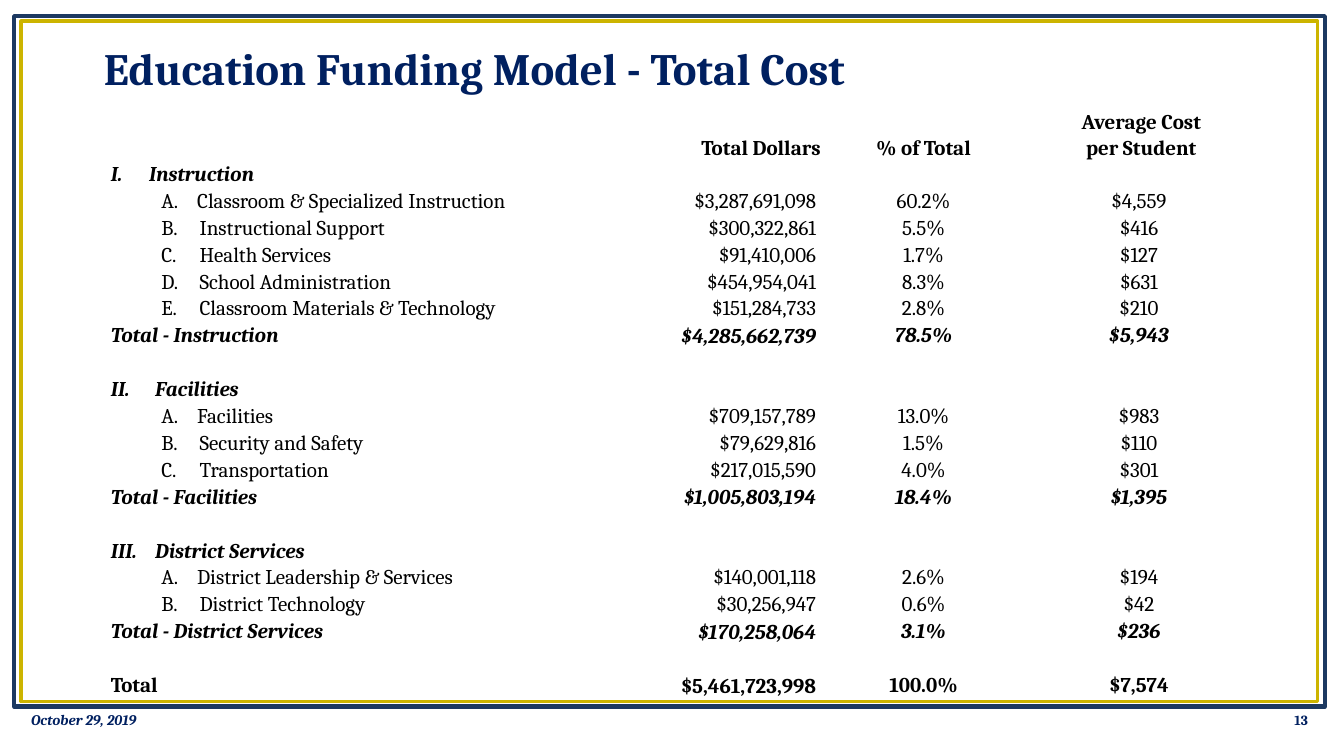
from lxml.etree import SubElement
from pptx import Presentation
from pptx.dml.color import RGBColor
from pptx.enum.shapes import MSO_SHAPE
from pptx.enum.text import MSO_ANCHOR as ANCHOR, PP_ALIGN as ALIGN
from pptx.oxml.ns import qn
from pptx.util import Inches, Pt

COLORS = {"navy": "002060", "frame": "1C3961", "gold": "CCB400", "black": "000000"}
NO_STYLE = "{2D5ABB26-0587-4C30-8999-92F81FD0307C}"
COLUMNS = [4.74, 2.44, 1.9, 2.42]
HEADINGS = ["", "Total Dollars", "% of Total", "Average Cost\nper Student"]
ALIGNS = [ALIGN.LEFT, ALIGN.RIGHT, ALIGN.CENTER, ALIGN.CENTER]
TABLE_HEIGHT, HEADER_HEIGHT = 5.87, 0.53

# Each section: name, items, totals
SECTIONS = [
    ("Instruction", [
        ("Classroom & Specialized Instruction", "$3,287,691,098 ", "60.2%", "$4,559 "),
        ("Instructional Support", "$300,322,861 ", "5.5%", "$416 "),
        ("Health Services", "$91,410,006 ", "1.7%", "$127 "),
        ("School Administration", "$454,954,041 ", "8.3%", "$631 "),
        ("Classroom Materials & Technology", "$151,284,733 ", "2.8%", "$210 "),
    ], ("$4,285,662,739 ", "78.5%", "$5,943 ")),
    ("Facilities", [
        ("Facilities", "$709,157,789 ", "13.0%", "$983 "),
        ("Security and Safety", "$79,629,816 ", "1.5%", "$110 "),
        ("Transportation", "$217,015,590 ", "4.0%", "$301 "),
    ], ("$1,005,803,194 ", "18.4%", "$1,395 ")),
    ("District Services", [
        ("District Leadership & Services", "$140,001,118 ", "2.6%", "$194 "),
        ("District Technology", "$30,256,947 ", "0.6%", "$42 "),
    ], ("$170,258,064 ", "3.1%", "$236 ")),
]
GRAND_TOTAL = ("Total", "$5,461,723,998 ", "100.0%", "$7,574 ")


def add_run(p, text, color, **formats):
    r = p.add_run()
    r.text = text
    r.font.color.rgb = RGBColor.from_string(COLORS[color])
    for name, value in {"name": "Cambria", **formats}.items():
        setattr(r.font, name, value)


def add_frame(s, box, color, width):
    sp = s.shapes.add_shape(MSO_SHAPE.RECTANGLE, *map(Inches, box))
    sp.shadow.inherit = False
    sp.fill.background()
    sp.line.color.rgb = RGBColor.from_string(COLORS[color])
    sp.line.width = Pt(width)


def add_footer(s, left, text, align, **formats):
    tf = s.shapes.add_textbox(Inches(left), Inches(6.94), Inches(3), Inches(0.4)).text_frame
    tf.word_wrap = True
    tf.vertical_anchor = ANCHOR.MIDDLE
    tf.paragraphs[0].alignment = align
    add_run(tf.paragraphs[0], text, "navy", bold=True, **formats)


def number_paragraph(p, kind, start, left, hang):
    pPr = p._p.get_or_add_pPr()
    pPr.set("marL", str(Inches(left)))
    pPr.set("indent", str(-Inches(hang)))
    SubElement(pPr, qn("a:buAutoNum"), type=kind, startAt=str(start))


def fill_cell(cell, text, align, anchor, numbering=None, **formats):
    for side, margin in {"left": 0.07, "right": 0.07, "top": 0, "bottom": 0}.items():
        setattr(cell, f"margin_{side}", Inches(margin))
    cell.vertical_anchor = anchor
    cell.fill.background()
    tf = cell.text_frame
    for i, line in enumerate(text.split("\n")):
        p = tf.add_paragraph() if i else tf.paragraphs[0]
        p.alignment = align
        if numbering:
            number_paragraph(p, *numbering)
        if line:
            p.line_spacing = 1.07
            add_run(p, line, "black", size=Pt(15), **formats)
        else:
            SubElement(p._p, qn("a:endParaRPr"), sz="1000")


def table_rows():
    """Yield the texts, label numbering and font formats of each row."""
    blank = ("",) * 4
    strong = {"bold": True, "italic": True}
    for n, (name, items, totals) in enumerate(SECTIONS, 1):
        indent = 0.38 if n == 1 else 0.44
        yield (name, *blank[1:]), ("romanUcPeriod", n, indent, indent), strong
        for k, (label, *values) in enumerate(items, 1):
            # The first item has a narrower indent and a leading space
            left, hang, lead = (0.81, 0.31, " ") if k == 1 else (0.88, 0.38, "")
            yield (lead + label, *values), ("alphaUcPeriod", k, left, hang), {}
        yield (f"Total - {name}", *totals), None, strong
        yield blank, None, {}
    yield GRAND_TOTAL, None, {"bold": True}


def add_cost_table(s):
    rows = list(table_rows())
    table = s.shapes.add_table(len(rows) + 1, len(COLUMNS), Inches(1.03), Inches(1.06),
                               Inches(sum(COLUMNS)), Inches(TABLE_HEIGHT)).table
    table.first_row = table.horz_banding = False
    table._tbl.tblPr.find(qn("a:tableStyleId")).text = NO_STYLE
    for column, width in zip(table.columns, COLUMNS):
        column.width = Inches(width)
    for row in table.rows:
        row.height = Inches((TABLE_HEIGHT - HEADER_HEIGHT) / len(rows))
    table.rows[0].height = Inches(HEADER_HEIGHT)

    for c, heading in enumerate(HEADINGS):
        fill_cell(table.cell(0, c), heading, ALIGNS[c], ANCHOR.BOTTOM, bold=True)
    for r, (texts, numbering, formats) in enumerate(rows, 1):
        for c, text in enumerate(texts):
            low = c == 1 and formats.get("bold")
            cell = table.cell(r, c)
            fill_cell(cell, text, ALIGNS[c], ANCHOR.BOTTOM if low else ANCHOR.MIDDLE,
                      None if c else numbering, **formats)
            if c == 0 and numbering and numbering[0] == "alphaUcPeriod":
                cell.text_frame.paragraphs[0].level = 1


def set_title(s, text):
    title = s.shapes.title
    box = {"left": 0.93, "top": 0.22, "width": 11.5, "height": 0.97}
    for name, value in box.items():
        setattr(title, name, Inches(value))
    tf = title.text_frame
    tf.vertical_anchor = ANCHOR.MIDDLE
    p = tf.paragraphs[0]
    p.alignment = ALIGN.LEFT
    p.line_spacing = 0.9
    add_run(p, text, "navy", size=Pt(32), bold=True)


def main():
    prs = Presentation()
    prs.slide_width, prs.slide_height = Inches(13.33), Inches(7.5)
    s = prs.slides.add_slide(prs.slide_layouts[5])

    # Double border
    add_frame(s, (0.14, 0.16, 13, 6.85), "frame", 3)
    add_frame(s, (0.21, 0.21, 12.86, 6.75), "gold", 2.5)

    # Title and table
    set_title(s, "Education Funding Model - Total Cost")
    add_cost_table(s)

    # Footer
    add_footer(s, 10.07, "13", ALIGN.RIGHT, size=Pt(10))
    add_footer(s, 0.21, "October 29, 2019", ALIGN.LEFT, size=Pt(10.5), italic=True)
    prs.save("out.pptx")


if __name__ == "__main__":
    main()
